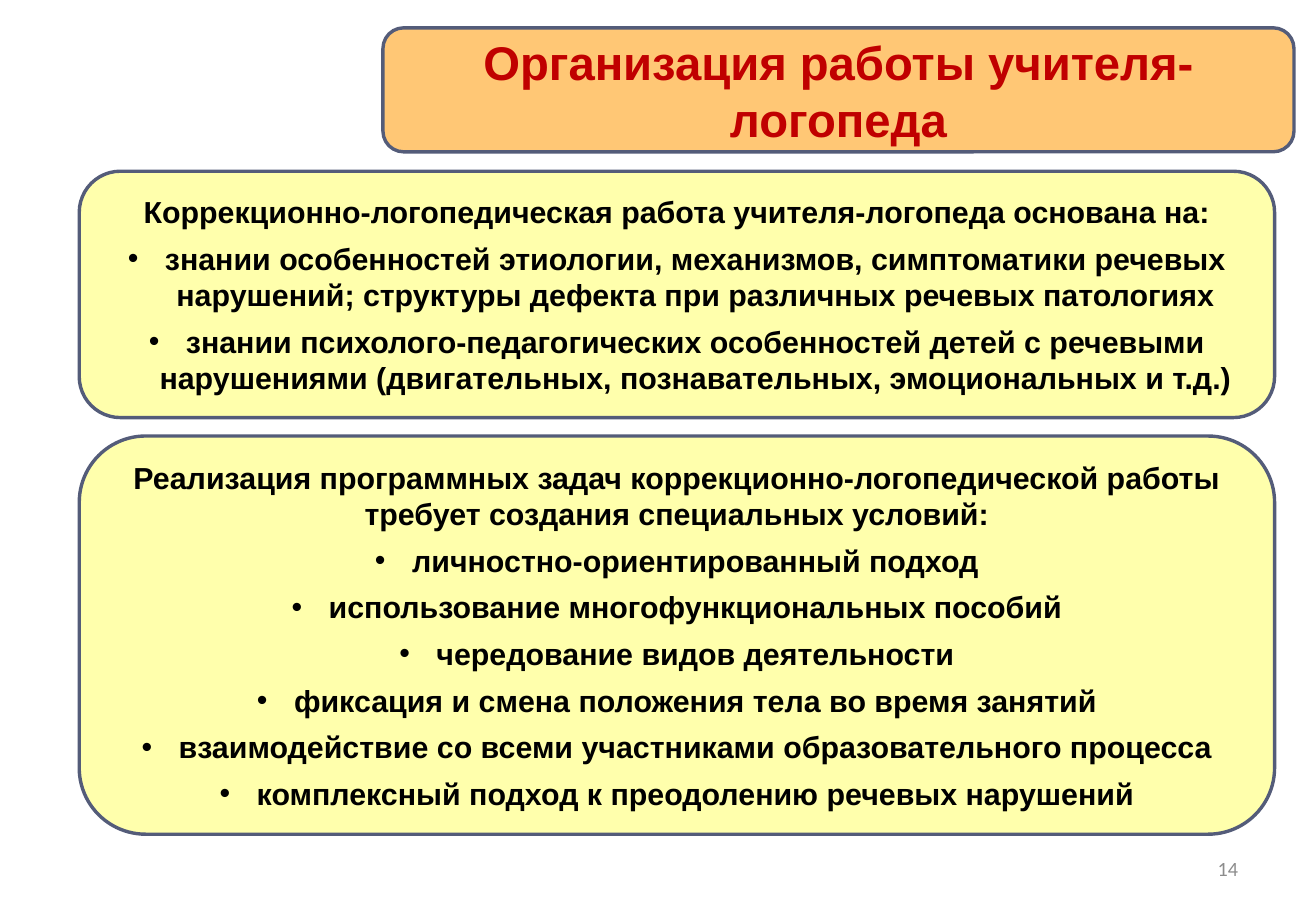
from lxml.etree import SubElement as Sub
from pptx import Presentation
from pptx.dml.color import RGBColor
from pptx.enum.shapes import MSO_SHAPE as Shape
from pptx.enum.text import MSO_ANCHOR as Anchor, PP_ALIGN as Align
from pptx.oxml.ns import qn
from pptx.util import Pt

ORANGE = RGBColor(0xFF, 0x99, 0x00)
YELLOW = RGBColor(0xFF, 0xFF, 0x66)
SLATE = RGBColor(0x54, 0x5C, 0x79)
RED = RGBColor(0xC0, 0x00, 0x00)
BLACK = RGBColor(0, 0, 0)
GREY = RGBColor(0x8C, 0x8C, 0x8C)
INDENT = Pt(22)

HEAD = {"name": "Arial", "size": Pt(28), "bold": True}
BODY = {"name": "Arial", "size": Pt(18), "bold": True}
NUMBER = {"name": "Calibri", "size": Pt(12), "bold": False}

# left, top, width, height, fill, text colour, font, heading, bullets
PANELS = [
    (227, 16.5, 540, 73.5, ORANGE, RED, HEAD,
     "Организация работы учителя-логопеда", []),
    (47, 101.5, 708.5, 146, YELLOW, BLACK, BODY,
     "Коррекционно-логопедическая работа учителя-логопеда основана на:",
     ["знании особенностей этиологии, механизмов, симптоматики речевых "
      "нарушений; структуры дефекта при различных речевых патологиях",
      "знании психолого-педагогических особенностей детей с речевыми "
      "нарушениями (двигательных, познавательных, эмоциональных и т.д.)"]),
    (47, 258.5, 708.5, 236, YELLOW, BLACK, BODY,
     "Реализация программных задач коррекционно-логопедической работы "
     "требует создания специальных условий:",
     ["личностно-ориентированный подход",
      "использование многофункциональных пособий",
      "чередование видов деятельности",
      "фиксация и смена положения тела во время занятий",
      "взаимодействие со всеми участниками образовательного процесса",
      "комплексный подход к преодолению речевых нарушений"]),
]


def write(para, text, look, color, align):
    para.text = text
    para.alignment = align
    for key, value in look.items():
        setattr(para.font, key, value)
    para.font.color.rgb = color


deck = Presentation()
deck.slide_width, deck.slide_height = Pt(780), Pt(540)
slide = deck.slides.add_slide(deck.slide_layouts[6])

for left, top, width, height, fill, color, look, head, items in PANELS:
    panel = slide.shapes.add_shape(Shape.ROUNDED_RECTANGLE, Pt(left), Pt(top),
                                   Pt(width), Pt(height))
    panel.shadow.inherit = False
    panel.fill.solid()
    panel.fill.fore_color.rgb = fill
    tint = panel.fill._xPr.find(qn("a:solidFill"))[0]
    Sub(tint, qn("a:alpha"), val="54000")
    panel.line.color.rgb = SLATE
    panel.line.width = Pt(2)
    frame = panel.text_frame
    frame.word_wrap = True
    frame.vertical_anchor = Anchor.MIDDLE
    write(frame.paragraphs[0], head, look, color, Align.CENTER)
    for item in items:
        para = frame.add_paragraph()
        para.space_before = Pt(6)
        props = para._p.get_or_add_pPr()
        props.set("marL", str(INDENT))
        props.set("indent", str(-INDENT))
        Sub(props, qn("a:buFont"), typeface="Arial")
        Sub(props, qn("a:buChar"), char="•")
        write(para, item, look, color, Align.CENTER)

box = slide.shapes.add_textbox(Pt(558.5), Pt(500.5), Pt(182.5), Pt(29))
frame = box.text_frame
frame.word_wrap = True
frame.vertical_anchor = Anchor.MIDDLE
write(frame.paragraphs[0], "14", NUMBER, GREY, Align.RIGHT)

deck.save("out.pptx")
